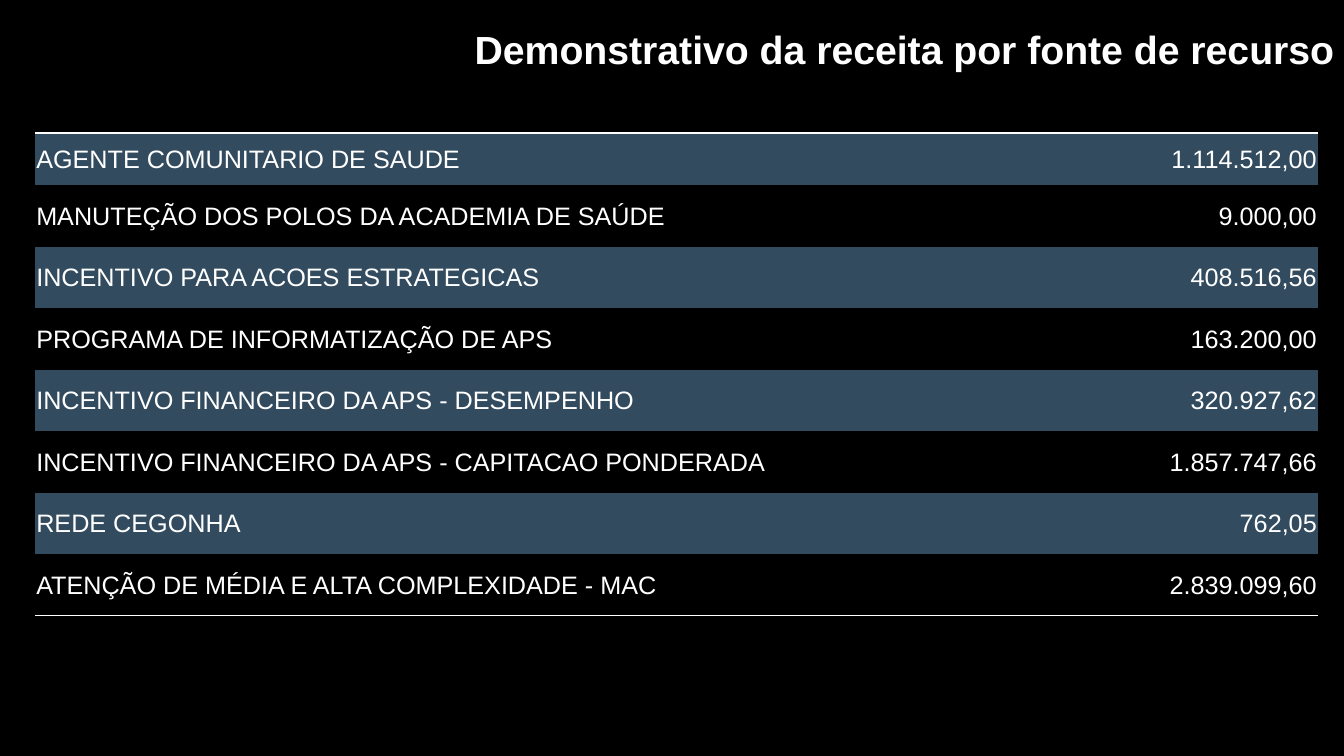
from dataclasses import dataclass

from lxml import etree
from pptx import Presentation
from pptx import util as u
from pptx.dml import color
from pptx.enum import text
from pptx.oxml import ns

COLORS = {"background": "000000", "band": "324B5F", "text": "FFFFFF", "rule": "FFFFFF"}
FONT = "Arial"
NO_STYLE = "{2D5ABB26-0587-4C30-8999-92F81FD0307C}"


@dataclass(frozen=True)
class Revenue:
    source: str
    amount: str


REVENUES = [
    Revenue("AGENTE COMUNITARIO DE SAUDE", "1.114.512,00"),
    Revenue("MANUTEÇÃO DOS POLOS DA ACADEMIA DE SAÚDE", "9.000,00"),
    Revenue("INCENTIVO PARA ACOES ESTRATEGICAS", "408.516,56"),
    Revenue("PROGRAMA DE INFORMATIZAÇÃO DE APS", "163.200,00"),
    Revenue("INCENTIVO FINANCEIRO DA APS - DESEMPENHO", "320.927,62"),
    Revenue("INCENTIVO FINANCEIRO DA APS - CAPITACAO PONDERADA", "1.857.747,66"),
    Revenue("REDE CEGONHA", "762,05"),
    Revenue("ATENÇÃO DE MÉDIA E ALTA COMPLEXIDADE - MAC", "2.839.099,60"),
]


def rgb(name: str) -> color.RGBColor:
    return color.RGBColor.from_string(COLORS[name])


def format_paragraph(paragraph, size: int, align, bold: bool = False) -> None:
    paragraph.alignment = align
    for run in paragraph.runs:
        run.font.name = FONT
        run.font.size = u.Pt(size)
        run.font.bold = bold
        run.font.color.rgb = rgb("text")


def add_rule(cell, edge: str) -> None:
    line = etree.Element(ns.qn(f"a:{edge}"), w=str(u.Pt(1)))
    fill = etree.SubElement(line, ns.qn("a:solidFill"))
    etree.SubElement(fill, ns.qn("a:srgbClr"), val=COLORS["rule"])
    cell._tc.get_or_add_tcPr().insert(0, line)


def fill_cell(cell, words: str, align, banded: bool) -> None:
    cell.margin_left = cell.margin_right = cell.margin_top = u.Inches(0.01)
    cell.margin_bottom = u.Inches(0)
    cell.vertical_anchor = text.MSO_ANCHOR.MIDDLE
    cell.text_frame.text = words
    format_paragraph(cell.text_frame.paragraphs[0], 18, align)
    if banded:
        cell.fill.solid()
        cell.fill.fore_color.rgb = rgb("band")
    else:
        cell.fill.background()


def add_revenue_table(slide, revenues: list[Revenue]) -> None:
    revenue_table = slide.shapes.add_table(
        len(revenues), 2, u.Inches(0.35), u.Inches(1.32), u.Inches(12.72), u.Inches(4.79)
    ).table
    revenue_table.first_row = False
    revenue_table.horz_banding = False
    revenue_table._tbl.tblPr.find(ns.qn("a:tableStyleId")).text = NO_STYLE
    for column, width in zip(revenue_table.columns, (8.81, 3.91)):
        column.width = u.Inches(width)
    for index, revenue in enumerate(revenues):
        revenue_table.rows[index].height = u.Inches(0.61 if index else 0.52)
        source, amount = revenue_table.rows[index].cells
        banded = index % 2 == 0
        fill_cell(source, revenue.source, text.PP_ALIGN.LEFT, banded)
        fill_cell(amount, revenue.amount, text.PP_ALIGN.RIGHT, banded)
    for row, edge in ((0, "lnT"), (len(revenues) - 1, "lnB")):
        for cell in revenue_table.rows[row].cells:
            add_rule(cell, edge)


def add_heading(slide, words: str) -> None:
    heading = slide.shapes.add_textbox(
        u.Inches(2.79), u.Inches(0.2), u.Inches(10.54), u.Inches(0.57)
    ).text_frame
    heading.word_wrap = True
    heading.auto_size = text.MSO_AUTO_SIZE.SHAPE_TO_FIT_TEXT
    heading.text = words
    format_paragraph(heading.paragraphs[0], 28, text.PP_ALIGN.RIGHT, bold=True)


def main() -> None:
    deck = Presentation()
    deck.slide_width, deck.slide_height = u.Inches(13.33), u.Inches(7.5)
    slide = deck.slides.add_slide(deck.slide_layouts[6])
    slide.background.fill.solid()
    slide.background.fill.fore_color.rgb = rgb("background")
    add_revenue_table(slide, REVENUES)
    add_heading(slide, "Demonstrativo da receita por fonte de recurso")
    deck.save("out.pptx")


if __name__ == "__main__":
    main()
